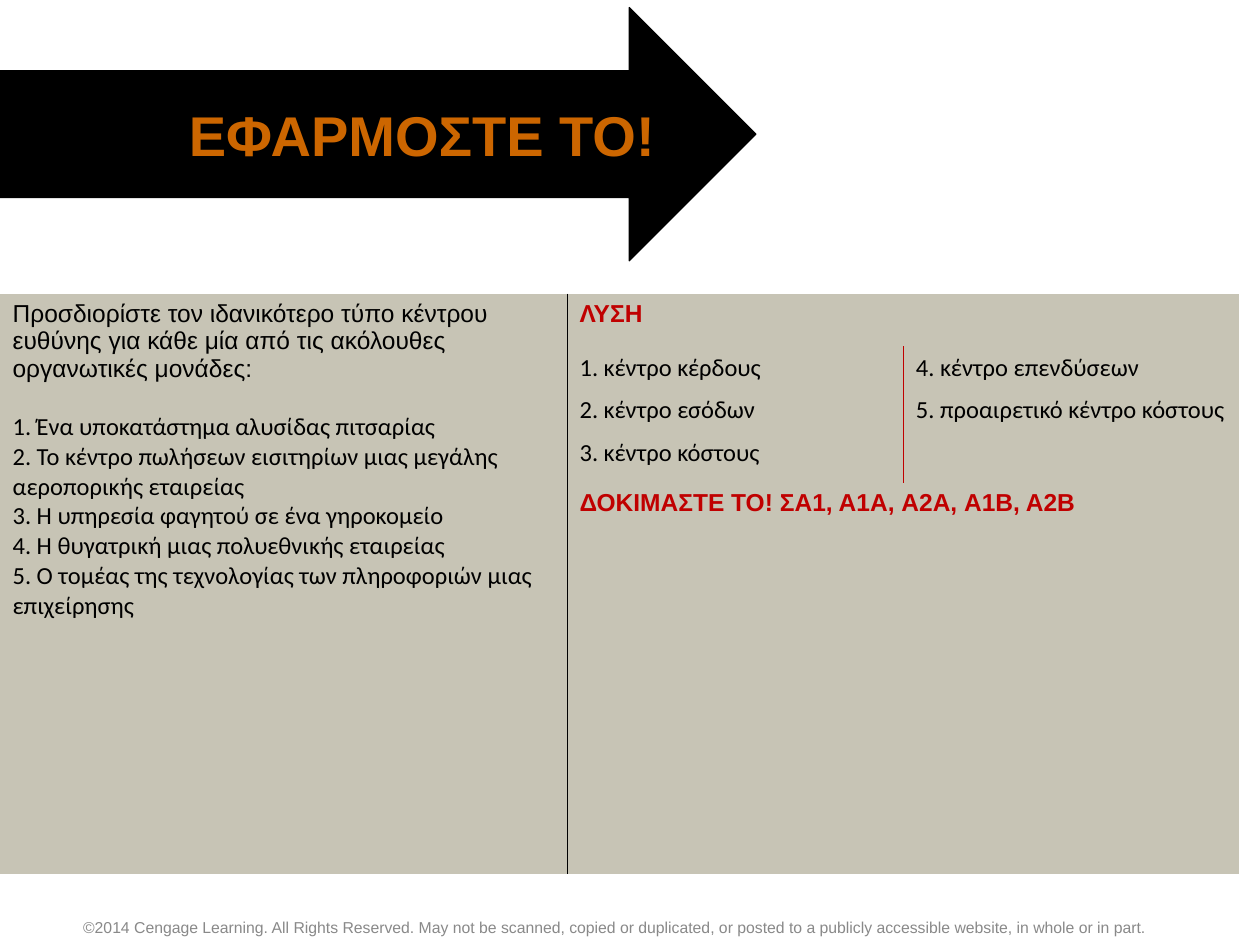
from typing import NamedTuple

from lxml.etree import SubElement
from pptx import Presentation
from pptx.dml.color import RGBColor
from pptx.enum.shapes import MSO_SHAPE
from pptx.enum.text import MSO_ANCHOR, PP_ALIGN
from pptx.oxml.ns import qn
from pptx.util import Inches, Pt

BLACK, RED, ORANGE, GREY, SAND = "000000", "C00000", "CC6600", "898989", "C7C4B5"
PLAIN_TABLE_STYLE = "{2D5ABB26-0587-4C30-8999-92F81FD0307C}"


class Line(NamedTuple):
    text: str
    font: str = "Calibri"
    size: float = 14
    color: str = BLACK
    bold: bool = False
    before: float = 0


class Entry(NamedTuple):
    row: int
    col: int
    lines: list[Line]


def rgb(value: str) -> RGBColor:
    return RGBColor.from_string(value)


def write(frame, lines: list[Line], align=PP_ALIGN.LEFT) -> None:
    for index, line in enumerate(lines):
        paragraph = frame.add_paragraph() if index else frame.paragraphs[0]
        paragraph.text = line.text
        paragraph.alignment = align
        if line.before:
            paragraph.space_before = Pt(line.before)
        for run in paragraph.runs:
            run.font.name = line.font
            run.font.size = Pt(line.size)
            run.font.bold = line.bold
            run.font.color.rgb = rgb(line.color)


def set_border(cell, side: str, color: str, width: float) -> None:
    # Borders come before the fill in the cell properties
    properties = cell._tc.get_or_add_tcPr()
    border = SubElement(properties, qn(f"a:ln{side}"), w=str(Pt(width)))
    fill = SubElement(border, qn("a:solidFill"))
    SubElement(fill, qn("a:srgbClr"), val=color)


def heading(text: str) -> Line:
    return Line(text, font="Arial", color=RED, bold=True)


ENTRIES = [
    Entry(0, 0, [
        Line("Προσδιορίστε τον ιδανικότερο τύπο κέντρου ευθύνης για κάθε μία "
             "από τις ακόλουθες οργανωτικές μονάδες:", font="Arial"),
        Line("1. Ένα υποκατάστημα αλυσίδας πιτσαρίας\v"
             "2. Το κέντρο πωλήσεων εισιτηρίων μιας μεγάλης αεροπορικής εταιρείας\v"
             "3. Η υπηρεσία φαγητού σε ένα γηροκομείο\v"
             "4. Η θυγατρική μιας πολυεθνικής εταιρείας", before=17),
        Line("5. Ο τομέας της τεχνολογίας των πληροφοριών μιας επιχείρησης"),
    ]),
    Entry(0, 1, [heading("ΛΥΣΗ")]),
    Entry(1, 1, [Line("1. κέντρο κέρδους")]),
    Entry(2, 1, [Line("2. κέντρο εσόδων")]),
    Entry(3, 1, [Line("3. κέντρο κόστους")]),
    Entry(1, 2, [Line("4. κέντρο επενδύσεων")]),
    Entry(2, 2, [Line("5. προαιρετικό κέντρο κόστους")]),
    Entry(4, 1, [heading("ΔΟΚΙΜΑΣΤΕ ΤΟ! ΣΑ1, Α1A, Α2A, Α1Β, Α2Β")]),
]
COLUMN_WIDTHS = [4.5, 2.67, 2.66]
ROW_HEIGHTS = [0.42, 0.34, 0.34, 0.34, 3.11]
ANSWER_ROWS = range(1, 4)


def add_footer(slide) -> None:
    footer = slide.shapes.add_textbox(Inches(0.25), Inches(6.98), Inches(9.25), Inches(0.5))
    frame = footer.text_frame
    frame.word_wrap = True
    frame.vertical_anchor = MSO_ANCHOR.BOTTOM
    notice = ("©2014 Cengage Learning. All Rights Reserved. May not be scanned, copied or "
              "duplicated, or posted to a publicly accessible website, in whole or in part.")
    write(frame, [Line(notice, font="Arial", size=9, color=GREY)], PP_ALIGN.CENTER)


def add_exercise(slide) -> None:
    exercise = slide.shapes.add_table(
        len(ROW_HEIGHTS), len(COLUMN_WIDTHS), Inches(0), Inches(2.33),
        Inches(sum(COLUMN_WIDTHS)), Inches(sum(ROW_HEIGHTS))).table
    exercise.first_row = exercise.horz_banding = False
    exercise._tbl.tblPr.find(qn("a:tableStyleId")).text = PLAIN_TABLE_STYLE
    for column, width in zip(exercise.columns, COLUMN_WIDTHS):
        column.width = Inches(width)
    for row, height in zip(exercise.rows, ROW_HEIGHTS):
        row.height = Inches(height)

    # Question spans all rows; both headings span the two answer columns
    last = len(ROW_HEIGHTS) - 1
    exercise.cell(0, 0).merge(exercise.cell(last, 0))
    for row in (0, last):
        exercise.cell(row, 1).merge(exercise.cell(row, 2))

    # Thin rule beside the question, red rule between the answers
    for row in range(len(ROW_HEIGHTS)):
        set_border(exercise.cell(row, 1), "L", BLACK, 0.5)
        set_border(exercise.cell(row, 0), "R", BLACK, 0.5)
    for row in ANSWER_ROWS:
        set_border(exercise.cell(row, 1), "R", RED, 1)
        set_border(exercise.cell(row, 2), "L", RED, 1)

    for cell in exercise.iter_cells():
        cell.fill.solid()
        cell.fill.fore_color.rgb = rgb(SAND)
    for entry in ENTRIES:
        write(exercise.cell(entry.row, entry.col).text_frame, entry.lines)
    write(exercise.cell(3, 2).text_frame, [Line("")])


def add_title_arrow(slide) -> None:
    arrow = slide.shapes.add_shape(
        MSO_SHAPE.RIGHT_ARROW, Inches(0), Inches(0.06), Inches(6), Inches(2.01))
    arrow.shadow.inherit = False
    arrow.fill.solid()
    arrow.fill.fore_color.rgb = rgb(BLACK)
    arrow.line.color.rgb = rgb(BLACK)
    arrow.line.width = Pt(0.75)
    frame = arrow.text_frame
    frame.word_wrap = True
    frame.margin_left = Inches(1.3)
    frame.vertical_anchor = MSO_ANCHOR.MIDDLE
    title = Line("ΕΦΑΡΜΟΣΤΕ ΤΟ!", font="Arial", size=32, color=ORANGE, bold=True)
    write(frame, [title], PP_ALIGN.CENTER)


def main() -> None:
    deck = Presentation()
    deck.slide_width, deck.slide_height = Inches(10), Inches(7.5)
    slide = deck.slides.add_slide(deck.slide_layouts[6])
    add_footer(slide)
    add_exercise(slide)
    add_title_arrow(slide)
    deck.save("out.pptx")


if __name__ == "__main__":
    main()
